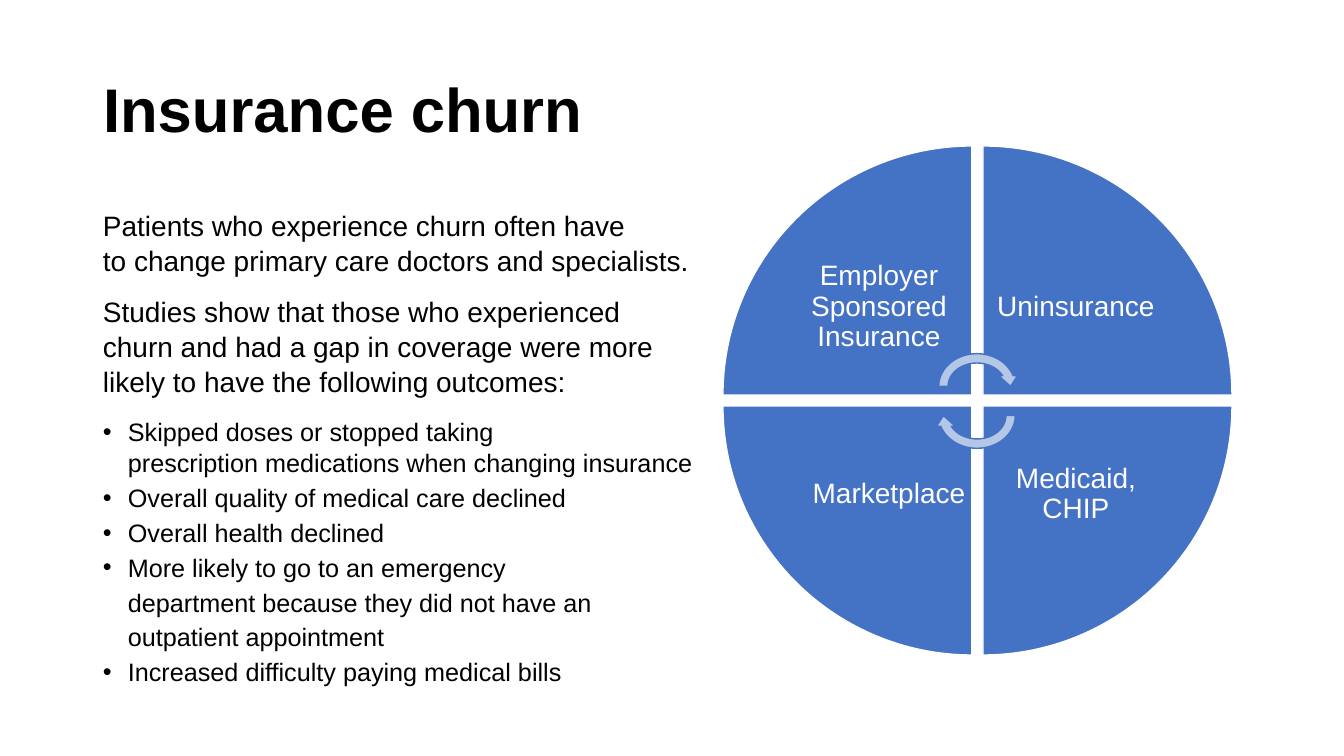
from pptx import Presentation, util as u
from pptx.dml.color import RGBColor
from pptx.enum import shapes, text
from pptx.oxml.ns import qn
from lxml import etree

# Content; "~" stands for a no-break space
TITLE = "Insurance churn"
INTRO = [
    "Patients who experience churn often~have to~change~primary care doctors and specialists.",
    "Studies show that those who experienced churn and~had~a gap in coverage were more likely to have the~following outcomes:",
]
POINTS = [
    "Skipped doses or stopped taking prescription~medications when changing insurance",
    "Overall quality of medical care declined",
    "Overall health declined",
    "More likely to go to an emergency department~because~they did not have an outpatient appointment~",
    "Increased difficulty paying medical bills",
]
# label, column, row, left and right inset; clockwise from top left
PARTS = [
    ("Employer Sponsored Insurance", 0, 0, 0, 10),
    ("Uninsurance", 1, 0, 10, 0),
    ("Medicaid, CHIP", 1, 1, 10, 0),
    ("Marketplace", 0, 1, 10, 0),
]
BLUE, PALE, WHITE, BLACK = "4472C4", "B4C7E7", "FFFFFF", "000000"
LEFT, TOP, SIZE, STEP, LABEL = 723, 146, 249, 260, 176
MID = text.MSO_ANCHOR.MIDDLE
SHAPE = shapes.MSO_SHAPE


def px(n):
    return round(n * 914400 / 100.8)


def color(code):
    return RGBColor.from_string(code)


def put(item, vals):
    for key, val in vals.items():
        setattr(item, key, val)


def style(para, size, ink, bold=False, **vals):
    put(para, vals)
    put(para.font, {"name": "Arial", "size": u.Pt(size), "bold": bold})
    para.font.color.rgb = color(ink)


def draw(kind, box, turn, fill, line):
    item = slide.shapes.add_shape(kind, *map(px, box))
    item.rotation = turn
    item.shadow.inherit = False
    item.fill.solid()
    item.fill.fore_color.rgb = color(fill)
    item.line.color.rgb = color(line)
    item.line.width = u.Pt(1)


def write(box, **vals):
    frame = slide.shapes.add_textbox(*map(px, box)).text_frame
    put(frame, {"word_wrap": True, **vals})
    return frame


def bullet(para):
    props = para._p.get_or_add_pPr()
    props.set("marL", str(px(25)))
    props.set("indent", str(-px(25)))
    etree.SubElement(props, qn("a:buFont")).set("typeface", "Arial")
    etree.SubElement(props, qn("a:buChar")).set("char", "•")


deck = Presentation()
put(deck, {"slide_width": px(1344), "slide_height": px(756)})
slide = deck.slides.add_slide(deck.slide_layouts[5])

# Title
head = slide.shapes.title
put(head, dict(zip(("left", "top", "width", "height"), map(px, (93, 40, 1159, 146)))))
put(head.text_frame, {"text": TITLE, "vertical_anchor": MID,
                      "auto_size": text.MSO_AUTO_SIZE.NONE})
style(head.text_frame.paragraphs[0], 44, BLACK, True,
      line_spacing=0.9, alignment=text.PP_ALIGN.LEFT)

# Quarter wedges
for i, (label, col, row, *_) in enumerate(PARTS):
    draw(SHAPE.PIE_WEDGE, (LEFT + col * STEP, TOP + row * STEP, SIZE, SIZE),
         90 * i, BLUE, WHITE)

# Labels sit against the inner corner of each wedge
for label, col, row, west, east in PARTS:
    x = LEFT + (STEP if col else SIZE - LABEL)
    y = TOP + (STEP if row else SIZE - LABEL)
    frame = write((x, y, LABEL, LABEL), vertical_anchor=MID,
                  margin_left=px(west), margin_right=px(east),
                  margin_top=px(16), margin_bottom=px(16))
    frame.text = label
    style(frame.paragraphs[0], 20, WHITE,
          line_spacing=0.9, alignment=text.PP_ALIGN.CENTER)

# Arrows around the hub
for y, turn in ((349, 0), (378, 180)):
    draw(SHAPE.CIRCULAR_ARROW, (934, y, 86, 75), turn, PALE, BLUE)

# Body text
body = write((93, 202, 612, 480))
for i, line in enumerate(INTRO + POINTS):
    para = body.paragraphs[0] if i == 0 else body.add_paragraph()
    para.text = line.replace("~", chr(160))
    if i < len(INTRO):
        style(para, 20, BLACK, line_spacing=1.04, space_after=u.Pt(12))
    else:
        bullet(para)
        style(para, 18, BLACK, line_spacing=1.04 if i == len(INTRO) else 1.15)

deck.save("out.pptx")
